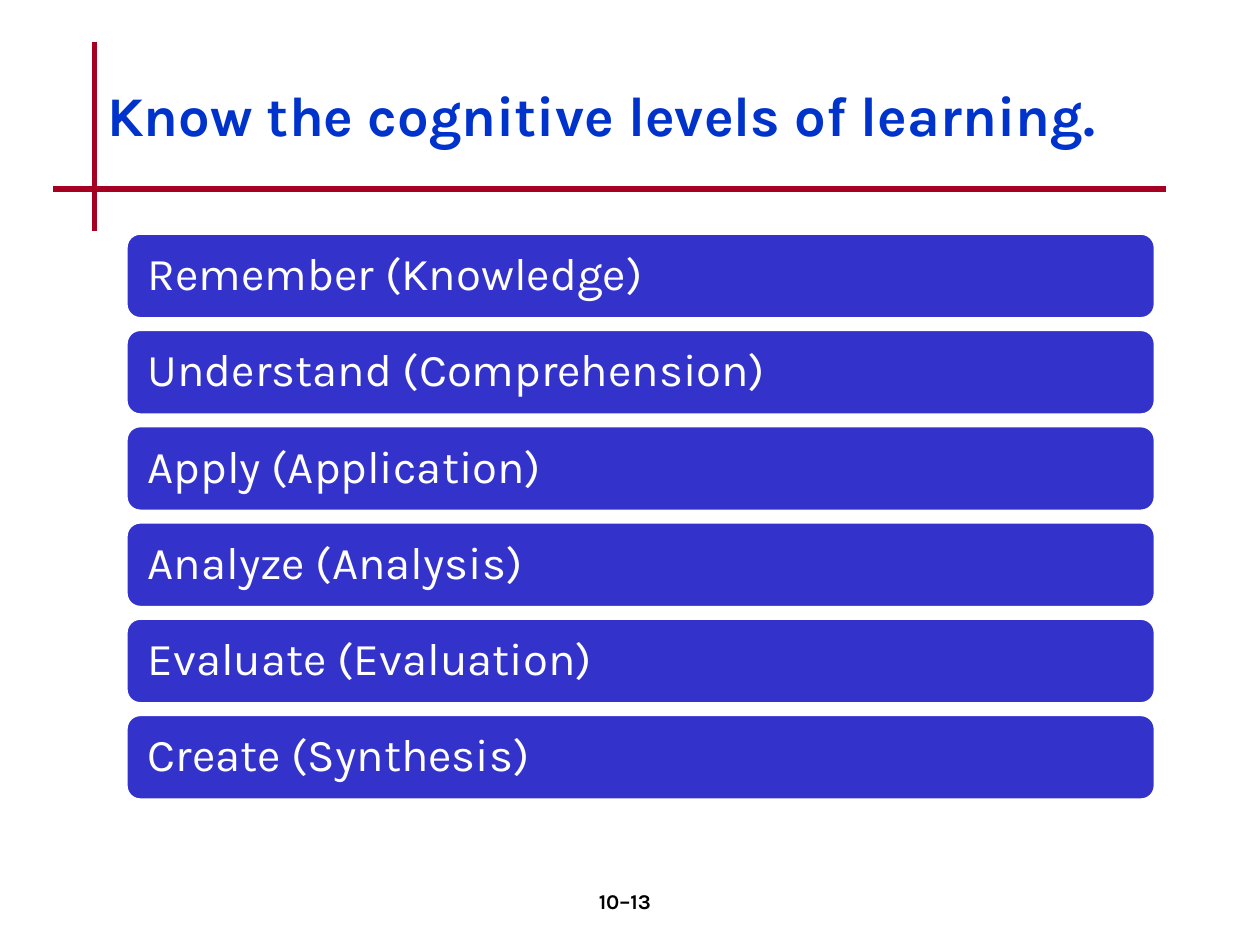
from dataclasses import dataclass

import pptx
import pptx.dml.color
import pptx.enum.shapes
import pptx.enum.text
import pptx.oxml
import pptx.oxml.ns
import pptx.util
from pptx.util import Inches

RGBColor = pptx.dml.color.RGBColor
PP_ALIGN = pptx.enum.text.PP_ALIGN
MSO_ANCHOR = pptx.enum.text.MSO_ANCHOR


@dataclass(frozen=True)
class Theme:
    font: str = "Karla"
    title_color: RGBColor = RGBColor(0x00, 0x33, 0xCC)
    rule_color: RGBColor = RGBColor(0xA5, 0x00, 0x21)
    bar_color: RGBColor = RGBColor(0x33, 0x33, 0xCC)
    white: RGBColor = RGBColor(0xFF, 0xFF, 0xFF)
    black: RGBColor = RGBColor(0x00, 0x00, 0x00)
    title_size: int = 32
    bar_size: int = 26
    number_size: int = 12


THEME = Theme()

LEVELS = [
    "Remember (Knowledge)",
    "Understand (Comprehension)",
    "Apply (Application)",
    "Analyze (Analysis)",
    "Evaluate (Evaluation)",
    "Create (Synthesis)",
]
BAR_TOP = 1.85
BAR_HEIGHT = 0.68
BAR_PITCH = 0.764


def write_text(shape, text, size, color, bold=False, align=PP_ALIGN.LEFT,
               anchor=MSO_ANCHOR.MIDDLE, line_spacing=1.0):
    frame = shape.text_frame
    frame.text = text
    frame.word_wrap = True
    frame.auto_size = pptx.enum.text.MSO_AUTO_SIZE.NONE
    frame.vertical_anchor = anchor
    paragraph = frame.paragraphs[0]
    paragraph.alignment = align
    paragraph.line_spacing = line_spacing
    paragraph.font.name = THEME.font
    paragraph.font.size = pptx.util.Pt(size)
    paragraph.font.bold = bold
    paragraph.font.color.rgb = color


def add_rule(slide, x1, y1, x2, y2):
    connector = slide.shapes.add_connector(
        pptx.enum.shapes.MSO_CONNECTOR.STRAIGHT,
        Inches(x1), Inches(y1), Inches(x2), Inches(y2))
    connector.line.color.rgb = THEME.rule_color
    connector.line.width = pptx.util.Pt(3)
    properties = connector._element.spPr
    properties.append(pptx.oxml.parse_xml(
        f"<a:effectLst {pptx.oxml.ns.nsdecls('a')}/>"))


def add_title(slide, text):
    title = slide.shapes.title
    title.left, title.top = Inches(0.75), Inches(0.33)
    title.width, title.height = Inches(8.5), Inches(1.25)
    write_text(title, text, THEME.title_size, THEME.title_color,
               bold=True, line_spacing=0.8)


def add_level_bar(slide, text, top):
    bar = slide.shapes.add_shape(
        pptx.enum.shapes.MSO_SHAPE.ROUNDED_RECTANGLE,
        Inches(1), Inches(top), Inches(8.17), Inches(BAR_HEIGHT))
    bar.shadow.inherit = False
    bar.fill.solid()
    bar.fill.fore_color.rgb = THEME.bar_color
    bar.line.color.rgb = THEME.white
    bar.line.width = pptx.util.Pt(2)
    frame = bar.text_frame
    frame.margin_left = frame.margin_right = Inches(0.14)
    write_text(bar, text, THEME.bar_size, THEME.white, line_spacing=0.9)


def add_page_number(slide, text):
    box = slide.shapes.add_textbox(
        Inches(3.92), Inches(7), Inches(2.08), Inches(0.5))
    write_text(box, text, THEME.number_size, THEME.black, bold=True,
               align=PP_ALIGN.CENTER, anchor=MSO_ANCHOR.TOP)


def main():
    presentation = pptx.Presentation()
    presentation.slide_width = Inches(10)
    presentation.slide_height = Inches(7.5)
    slide = presentation.slides.add_slide(presentation.slide_layouts[5])

    add_rule(slide, 0.75, 0.33, 0.75, 1.83)
    add_rule(slide, 0.42, 1.5, 9.25, 1.5)
    add_title(slide, "Know the cognitive levels of learning.")
    for index, level in enumerate(LEVELS):
        add_level_bar(slide, level, BAR_TOP + index * BAR_PITCH)
    add_page_number(slide, "10–13")

    presentation.save("out.pptx")


if __name__ == "__main__":
    main()
